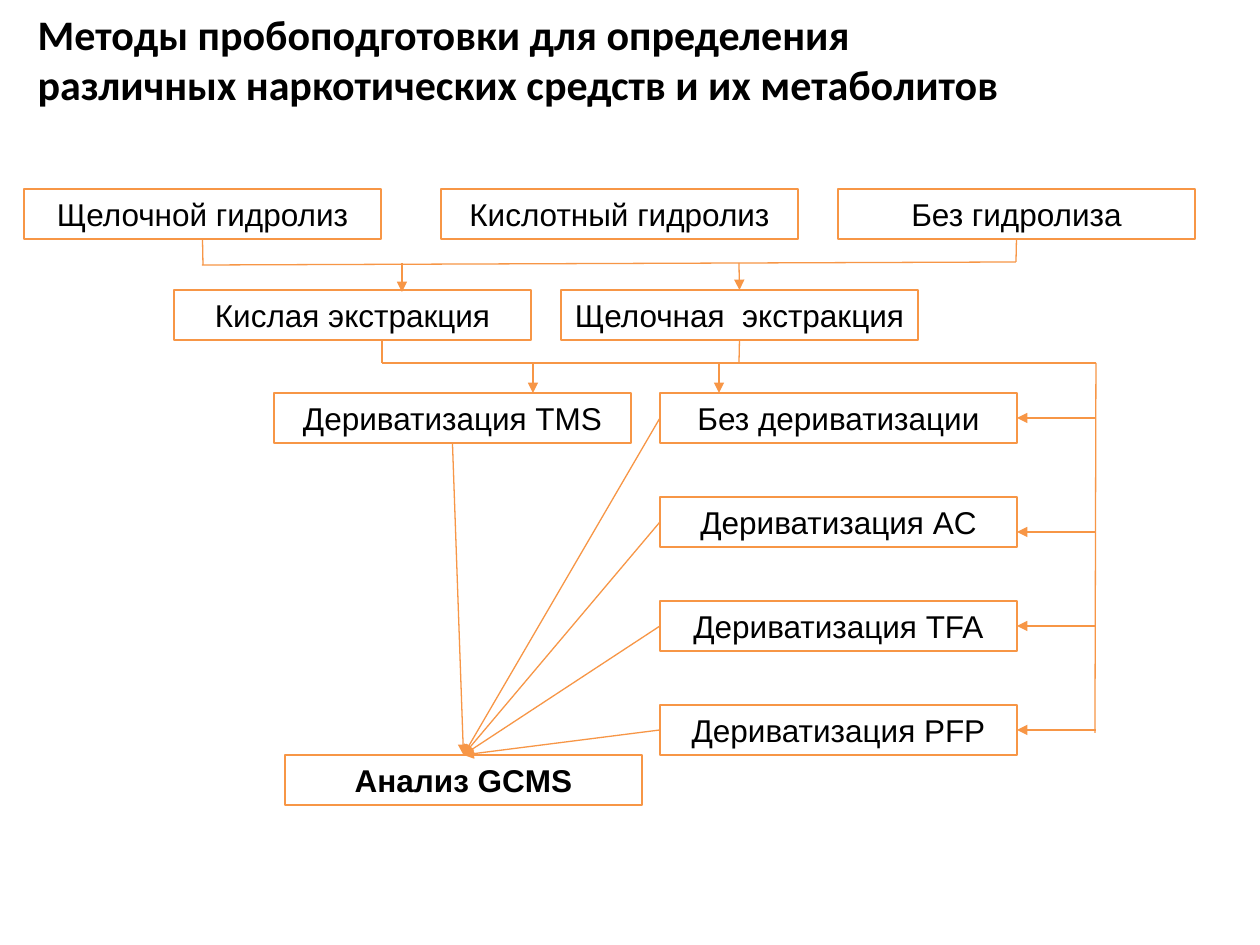
from dataclasses import dataclass

from lxml.etree import SubElement
from pptx import Presentation
from pptx.dml.color import RGBColor
from pptx.enum.shapes import MSO_CONNECTOR as CONNECTOR, MSO_SHAPE as SHAPE
from pptx.enum.text import MSO_ANCHOR as ANCHOR, MSO_AUTO_SIZE as AUTO_SIZE, PP_ALIGN as ALIGN
from pptx.oxml.ns import qn
from pptx.util import Emu, Pt


@dataclass(frozen=True)
class Theme:
    text: RGBColor = RGBColor(0x00, 0x00, 0x00)
    accent: RGBColor = RGBColor(0xF7, 0x96, 0x46)
    title_font: str = "Calibri"
    body_font: str = "Arial"
    title_size: Pt = Pt(24)
    body_size: Pt = Pt(18)
    line_width: Pt = Pt(0.75)


theme = Theme()
TOP, LEFT, BOTTOM, RIGHT = range(4)
BOX_WIDTH, BOX_HEIGHT = 357, 50


def px(length):
    return Emu(round(length * 914400 / 126))


def add_run(paragraph, text, font_name, size, bold):
    run = paragraph.add_run()
    run.text = text
    run.font.name = font_name
    run.font.size = size
    run.font.bold = bold
    run.font.color.rgb = theme.text


presentation = Presentation()
presentation.slide_width = px(1260)
presentation.slide_height = px(945)
slide = presentation.slides.add_slide(presentation.slide_layouts[5])

title = slide.shapes.title
title.left, title.top, title.width, title.height = px(25), px(0), px(1072), px(117)
title.text_frame.vertical_anchor = ANCHOR.MIDDLE
title.text_frame.word_wrap = True
title_paragraph = title.text_frame.paragraphs[0]
title_paragraph.alignment = ALIGN.LEFT
add_run(title_paragraph, "Методы пробоподготовки для определения",
        theme.title_font, theme.title_size, True)
title_paragraph.add_line_break()
add_run(title_paragraph, "различных наркотических средств и их метаболитов",
        theme.title_font, theme.title_size, True)

derivatizations = ["Без дериватизации", "Дериватизация AC", "Дериватизация TFA", "Дериватизация PFP"]
steps = [
    ("Щелочной гидролиз", 24, 189),
    ("Кислотный гидролиз", 441, 189),
    ("Без гидролиза", 838, 189),
    ("Кислая экстракция", 174, 290),
    ("Щелочная  экстракция", 561, 290),
    ("Дериватизация TMS", 274, 393),
    ("Анализ GCMS", 285, 755),
]
steps += [(name, 660, 393 + 104 * row) for row, name in enumerate(derivatizations)]

boxes = {}
for name, left, top in steps:
    box = slide.shapes.add_shape(SHAPE.RECTANGLE, px(left), px(top), px(BOX_WIDTH), px(BOX_HEIGHT))
    box.shadow.inherit = False
    box.fill.background()
    box.line.color.rgb = theme.accent
    box.line.width = theme.line_width
    frame = box.text_frame
    frame.word_wrap = True
    frame.auto_size = AUTO_SIZE.SHAPE_TO_FIT_TEXT
    frame.vertical_anchor = ANCHOR.TOP
    paragraph = frame.paragraphs[0]
    paragraph.alignment = ALIGN.CENTER
    add_run(paragraph, name, theme.body_font, theme.body_size, name == "Анализ GCMS")
    boxes[name] = box

lines = [
    ((202, 265), (1016, 262), False),
    ((203, 265), ("Щелочной гидролиз", BOTTOM), False),
    ((1016, 262), ("Без гидролиза", BOTTOM), False),
    ((402, 263), (402, 292), True),
    ((739, 263), ("Щелочная  экстракция", TOP), True),
    ((382, 363), (382, 340), False),
    ((739, 363), ("Щелочная  экстракция", BOTTOM), False),
    ((382, 363), (1096, 363), False),
    ((533, 363), (533, 393), True),
    ((719, 363), (719, 393), True),
    ((1095, 733), (1096, 363), False),
    ((1096, 418), ("Без дериватизации", RIGHT), True),
    ((1096, 532), (1017, 532), True),
    ((1096, 626), ("Дериватизация TFA", RIGHT), True),
    ((1096, 730), ("Дериватизация PFP", RIGHT), True),
    (("Дериватизация TMS", BOTTOM), ("Анализ GCMS", TOP), True),
]
lines += [((name, LEFT), ("Анализ GCMS", TOP), True) for name in derivatizations]

for start, end, has_arrow in lines:
    start_point = (0, 0) if start[0] in boxes else start
    end_point = (0, 0) if end[0] in boxes else end
    connector = slide.shapes.add_connector(
        CONNECTOR.STRAIGHT, *[px(length) for length in (*start_point, *end_point)])
    if start[0] in boxes:
        connector.begin_connect(boxes[start[0]], start[1])
    if end[0] in boxes:
        connector.end_connect(boxes[end[0]], end[1])
    connector.line.color.rgb = theme.accent
    connector.line.width = theme.line_width
    if has_arrow:
        SubElement(connector.line._get_or_add_ln(), qn("a:tailEnd"), type="triangle")
    SubElement(connector._element.spPr, qn("a:effectLst"))

presentation.save("out.pptx")
